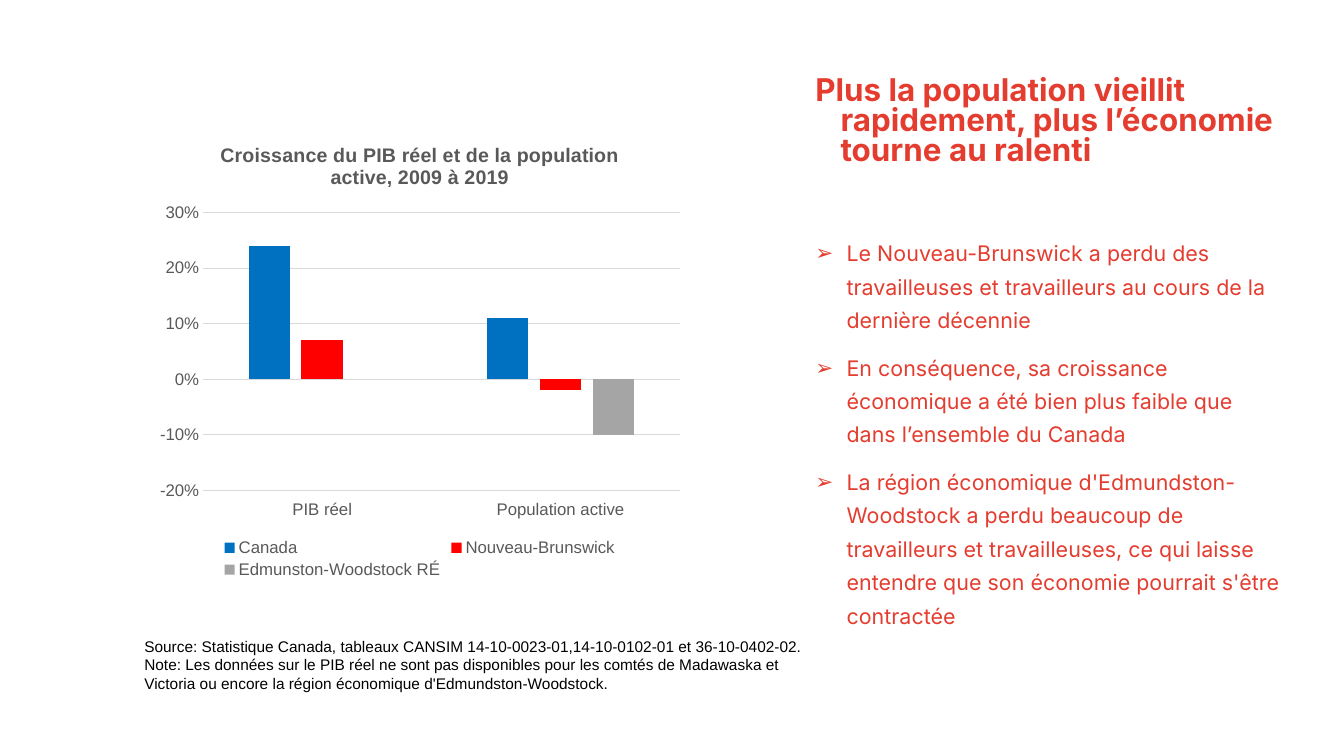
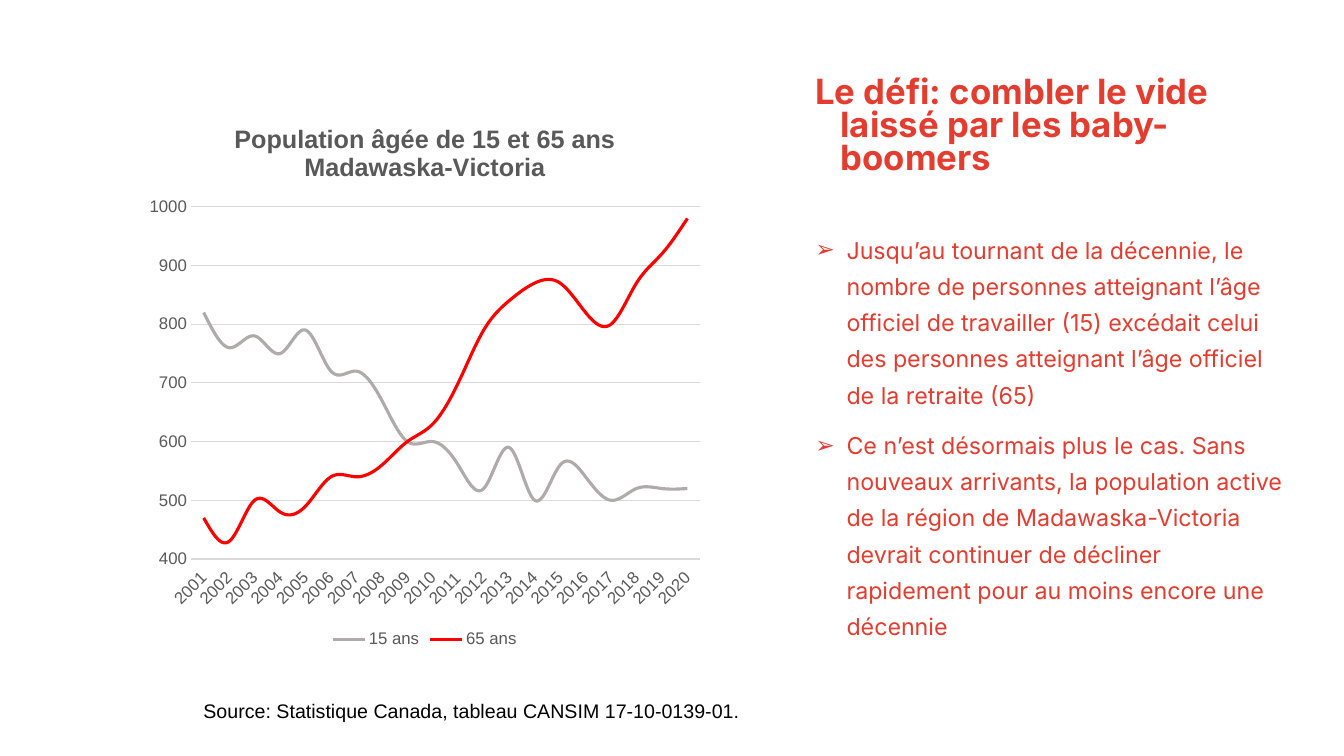
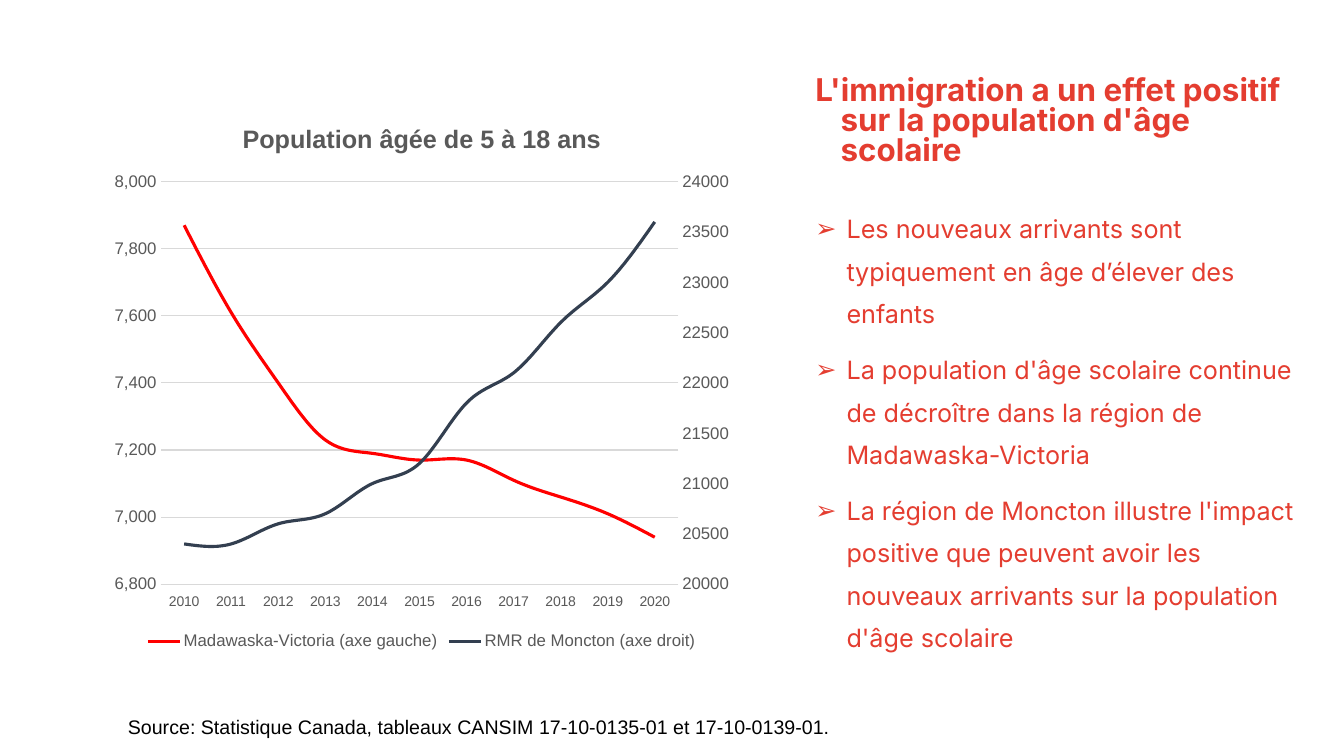
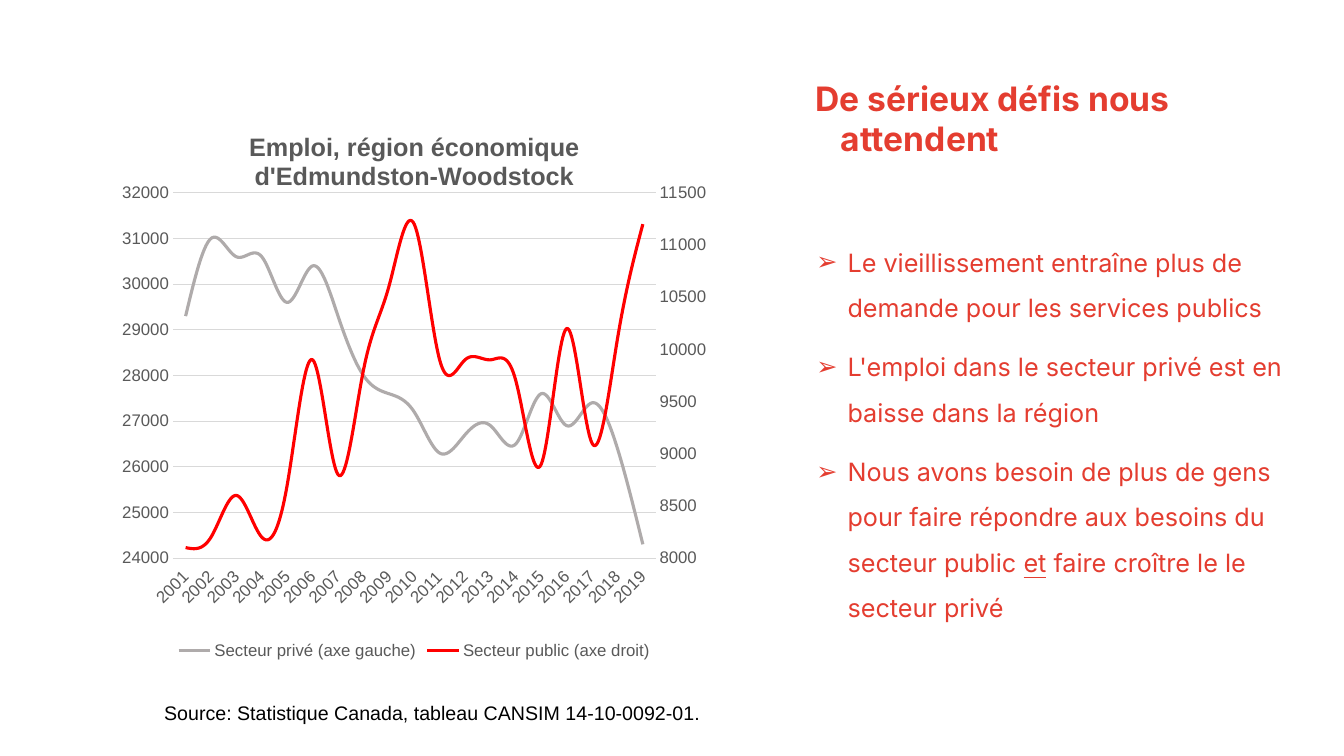
from copy import deepcopy
from dataclasses import dataclass
from typing import NamedTuple, Optional

from lxml import etree
from pptx import Presentation
from pptx.chart.axis import CategoryAxis, ValueAxis
from pptx.chart.chart import Chart
from pptx.chart.data import CategoryChartData
from pptx.dml.color import RGBColor
from pptx.enum.chart import (XL_CHART_TYPE, XL_LEGEND_POSITION, XL_TICK_LABEL_POSITION,
                             XL_TICK_MARK)
from pptx.enum.text import MSO_ANCHOR, MSO_AUTO_SIZE
from pptx.oxml.ns import qn
from pptx.slide import Slide
from pptx.text.text import Font, TextFrame, _Paragraph
from pptx.util import Inches, Pt

COLUMNS = XL_CHART_TYPE.COLUMN_CLUSTERED
LINES = XL_CHART_TYPE.LINE
LEGEND_BOTTOM = XL_LEGEND_POSITION.BOTTOM
LABELS_LOW = XL_TICK_LABEL_POSITION.LOW
TICK_NONE = XL_TICK_MARK.NONE
ANCHOR_TOP = MSO_ANCHOR.TOP
GROW = MSO_AUTO_SIZE.SHAPE_TO_FIT_TEXT

# Shared style
CORAL = RGBColor(0xE4, 0x3D, 0x30)
BLACK = RGBColor(0x00, 0x00, 0x00)
AXIS_GRAY = RGBColor(0x59, 0x59, 0x59)
GRID_GRAY = RGBColor(0xD9, 0xD9, 0xD9)
BLUE = RGBColor(0x00, 0x70, 0xC0)
RED = RGBColor(0xFF, 0x00, 0x00)
BAR_GRAY = RGBColor(0xA5, 0xA5, 0xA5)
LINE_GRAY = RGBColor(0xAF, 0xAB, 0xAB)
NAVY = RGBColor(0x33, 0x3F, 0x50)
TEXT_FONT = "Inter"
CHART_FONT = "Arial"

# Grid of 40 columns by 22.5 rows
CELL = Inches(1) / 3
GRID_COLUMNS, GRID_ROWS = 40, 22.5


class Area(NamedTuple):
    """Left, top, width and height in grid cells."""
    left: float
    top: float
    width: float
    height: float

    def lengths(self) -> list[int]:
        return [round(cells * CELL) for cells in self]


class Span(NamedTuple):
    text: str
    underline: bool = False


class Scale(NamedTuple):
    low: float
    high: float
    step: float
    number_format: str = "General"


class Series(NamedTuple):
    name: str
    color: RGBColor
    values: tuple[Optional[float], ...]


@dataclass(frozen=True)
class Graph:
    area: Area
    title: str
    categories: tuple[str, ...]
    series: tuple[Series, ...]
    scale: Scale
    kind: XL_CHART_TYPE = LINES
    right_scale: Optional[Scale] = None
    title_size: float = 18
    category_size: float = 12
    slanted: bool = False
    label_step: int = 1
    plot_share: Optional[tuple[float, float, float, float]] = None


@dataclass(frozen=True)
class Page:
    title: str
    title_size: float
    bullets: tuple[tuple[Span, ...], ...]
    bullet_size: float
    bullet_spacing: float
    bullet_area: Area
    graph: Graph
    source: tuple[str, ...]
    source_area: Area
    source_size: float = 14
    title_spacing: float = 0.8


TITLE_AREA = Area(23.22, 2.16, 15.27, 3.9)


def years(first: int, last: int) -> tuple[str, ...]:
    return tuple(str(year) for year in range(first, last + 1))


# Text
def set_font(font: Font, name: str, size: float, color: RGBColor, bold: bool = False) -> None:
    font.name = name
    font.size = Pt(size)
    font.bold = bold
    font.color.rgb = color


def add_frame(slide: Slide, area: Area) -> TextFrame:
    frame = slide.shapes.add_textbox(*area.lengths()).text_frame
    frame.word_wrap = True
    frame.vertical_anchor = ANCHOR_TOP
    return frame


def next_paragraph(frame: TextFrame, index: int) -> _Paragraph:
    return frame.add_paragraph() if index else frame.paragraphs[0]


def set_indent(para: _Paragraph, margin: float, hanging: float) -> None:
    properties = para._p.get_or_add_pPr()
    properties.set("marL", str(Inches(margin)))
    properties.set("indent", str(-Inches(hanging)))


def add_bullet(para: _Paragraph) -> None:
    properties = para._p.get_or_add_pPr()
    color = etree.SubElement(properties, qn("a:buClr"))
    etree.SubElement(color, qn("a:srgbClr"), val=str(CORAL))
    etree.SubElement(properties, qn("a:buFont"), typeface=CHART_FONT)
    etree.SubElement(properties, qn("a:buChar"), char="➢")


def draw_title(slide: Slide, page: Page) -> None:
    para = add_frame(slide, TITLE_AREA).paragraphs[0]
    set_indent(para, 0.5, 0.25)
    para.line_spacing = page.title_spacing
    run = para.add_run()
    run.text = page.title
    set_font(run.font, TEXT_FONT, page.title_size, CORAL, bold=True)


def draw_bullets(slide: Slide, page: Page) -> None:
    frame = add_frame(slide, page.bullet_area)
    for index, spans in enumerate(page.bullets):
        para = next_paragraph(frame, index)
        set_indent(para, 0.56, 0.31)
        add_bullet(para)
        para.line_spacing = page.bullet_spacing
        if index:
            para.space_before = Pt(10)
        for span in spans:
            run = para.add_run()
            run.text = span.text
            set_font(run.font, TEXT_FONT, page.bullet_size, CORAL)
            if span.underline:
                run.font.underline = True


def draw_source(slide: Slide, page: Page) -> None:
    frame = add_frame(slide, page.source_area)
    frame.auto_size = GROW
    for index, text in enumerate(page.source):
        run = next_paragraph(frame, index).add_run()
        run.text = text
        set_font(run.font, CHART_FONT, page.source_size, BLACK)


# Charts
def style_value_axis(axis: ValueAxis, scale: Scale, gridlines: bool = True) -> None:
    axis.minimum_scale, axis.maximum_scale = scale.low, scale.high
    axis.major_unit = scale.step
    axis.major_tick_mark = axis.minor_tick_mark = TICK_NONE
    axis.has_major_gridlines = gridlines
    if gridlines:
        grid_line = axis.major_gridlines.format.line
        grid_line.color.rgb = GRID_GRAY
        grid_line.width = Pt(0.75)
    axis.format.line.fill.background()
    axis.tick_labels.number_format = scale.number_format
    axis.tick_labels.number_format_is_linked = False
    set_font(axis.tick_labels.font, CHART_FONT, 12, AXIS_GRAY)


def style_category_axis(axis: CategoryAxis, graph: Graph) -> None:
    axis.major_tick_mark = axis.minor_tick_mark = TICK_NONE
    axis.tick_label_position = LABELS_LOW
    axis.format.line.color.rgb = GRID_GRAY
    axis.format.line.width = Pt(0.75)
    set_font(axis.tick_labels.font, CHART_FONT, graph.category_size, AXIS_GRAY)
    element = axis._element
    if graph.slanted:
        element.find(qn("c:txPr")).find(qn("a:bodyPr")).set("rot", str(-45 * 60000))
    if graph.label_step > 1:
        skip = etree.Element(qn("c:tickLblSkip"), val=str(graph.label_step))
        element.find(qn("c:noMultiLvlLbl")).addprevious(skip)


def style_series(chart: Chart, graph: Graph) -> None:
    plot = chart.plots[0]
    plot.vary_by_categories = False
    if graph.kind == COLUMNS:
        plot.gap_width, plot.overlap = 219, -27
    for item, series in zip(plot.series, graph.series):
        if graph.kind == COLUMNS:
            item.invert_if_negative = False
            item.format.fill.solid()
            item.format.fill.fore_color.rgb = series.color
        else:
            item.smooth = True
            item.format.line.color.rgb = series.color
            item.format.line.width = Pt(2.25)


def add_right_axis(chart: Chart, scale: Scale) -> None:
    """Move the second series to its own plot, scaled on the right."""
    left_plot = chart.plots[0]._element
    right_plot = deepcopy(left_plot)
    left_plot.remove(left_plot.findall(qn("c:ser"))[1])
    right_plot.remove(right_plot.findall(qn("c:ser"))[0])
    left_plot.addnext(right_plot)

    left_value = chart.value_axis._element
    category = deepcopy(chart.category_axis._element)
    value = deepcopy(left_value)
    left_value.addnext(value)
    value.addnext(category)
    for element, own, crossing in ((category, "5001", "5002"), (value, "5002", "5001")):
        element.find(qn("c:axId")).set("val", own)
        element.find(qn("c:crossAx")).set("val", crossing)
    for reference, own in zip(right_plot.findall(qn("c:axId")), ("5001", "5002")):
        reference.set("val", own)
    value.find(qn("c:axPos")).set("val", "r")
    value.find(qn("c:crosses")).set("val", "max")
    CategoryAxis(category).visible = False
    style_value_axis(ValueAxis(value), scale, gridlines=False)


def place_plot(chart: Chart, shares: tuple[float, float, float, float]) -> None:
    plot_area = chart._chartSpace.chart.plotArea
    for old_layout in plot_area.findall(qn("c:layout")):
        plot_area.remove(old_layout)
    layout = etree.Element(qn("c:layout"))
    manual = etree.SubElement(layout, qn("c:manualLayout"))
    settings = [("layoutTarget", "inner"), ("xMode", "edge"), ("yMode", "edge")]
    settings += zip("xywh", map(str, shares))
    for tag, setting in settings:
        etree.SubElement(manual, qn(f"c:{tag}"), val=setting)
    plot_area.insert(0, layout)


def draw_graph(slide: Slide, graph: Graph) -> None:
    data = CategoryChartData()
    data.categories = graph.categories
    for series in graph.series:
        data.add_series(series.name, series.values)
    chart = slide.shapes.add_chart(graph.kind, *graph.area.lengths(), data).chart
    set_font(chart.font, CHART_FONT, 12, AXIS_GRAY)

    chart.has_title = True
    chart.chart_title.include_in_layout = False
    title_frame = chart.chart_title.text_frame
    for index, text in enumerate(graph.title.split("\n")):
        run = next_paragraph(title_frame, index).add_run()
        run.text = text
        set_font(run.font, CHART_FONT, graph.title_size, AXIS_GRAY, bold=True)

    chart.has_legend = True
    chart.legend.position = LEGEND_BOTTOM
    chart.legend.include_in_layout = False
    set_font(chart.legend.font, CHART_FONT, 12, AXIS_GRAY)

    style_series(chart, graph)
    style_category_axis(chart.category_axis, graph)
    style_value_axis(chart.value_axis, graph.scale)
    if graph.right_scale:
        add_right_axis(chart, graph.right_scale)
    if graph.plot_share:
        place_plot(chart, graph.plot_share)


# Content
PAGES = (
    Page(
        title="Plus la population vieillit rapidement, plus l’économie tourne au ralenti",
        title_size=22.4,
        bullets=(
            (Span("Le Nouveau-Brunswick a perdu des travailleuses et travailleurs au cours "
                  "de la dernière décennie"),),
            (Span("En conséquence, sa croissance économique a été bien plus faible que dans "
                  "l’ensemble du Canada"),),
            (Span("La région économique d'Edmundston-Woodstock a perdu beaucoup de "
                  "travailleurs et travailleuses, ce qui laisse entendre que son économie "
                  "pourrait s'être contractée"),),
        ),
        bullet_size=15.3,
        bullet_spacing=1.3,
        bullet_area=Area(23.22, 6.78, 15.27, 13),
        graph=Graph(
            area=Area(4.44, 3.69, 16.11, 13.65),
            title="Croissance du PIB réel et de la population active, 2009 à 2019",
            title_size=14,
            kind=COLUMNS,
            categories=("PIB réel", "Population active"),
            series=(
                Series("Canada", BLUE, (0.24, 0.11)),
                Series("Nouveau-Brunswick", RED, (0.07, -0.02)),
                Series("Edmunston-Woodstock RÉ", BAR_GRAY, (None, -0.1)),
            ),
            scale=Scale(-0.2, 0.3, 0.1, "0%"),
        ),
        source=(
            "Source: Statistique Canada, tableaux CANSIM 14-10-0023-01,14-10-0102-01 et "
            "36-10-0402-02.",
            "Note: Les données sur le PIB réel ne sont pas disponibles pour les comtés de "
            "Madawaska et Victoria ou encore la région économique d'Edmundston-Woodstock.",
        ),
        source_area=Area(4, 18.81, 20.79, 1.98),
        source_size=11,
    ),
    Page(
        title="Le défi: combler le vide laissé par les baby-boomers",
        title_size=24.8,
        bullets=(
            (Span("Jusqu’au tournant de la décennie, le nombre de personnes atteignant l’âge "
                  "officiel de travailler (15) excédait celui des personnes atteignant l’âge "
                  "officiel de la retraite (65)"),),
            (Span("Ce n’est désormais plus le cas. Sans nouveaux arrivants, la population "
                  "active de la région de Madawaska-Victoria devrait continuer de décliner "
                  "rapidement pour au moins encore une décennie"),),
        ),
        bullet_size=16.6,
        bullet_spacing=1.3,
        bullet_area=Area(23.22, 6.63, 15.27, 13.71),
        graph=Graph(
            area=Area(4.11, 3.09, 17.07, 16.32),
            title="Population âgée de 15 et 65 ans\nMadawaska-Victoria",
            categories=years(2001, 2020),
            series=(
                Series("15 ans", LINE_GRAY,
                       (820, 760, 780, 750, 790, 720, 720, 670, 600, 600,
                        560, 520, 590, 500, 560, 540, 500, 520, 520, 520)),
                Series("65 ans", RED,
                       (470, 430, 500, 480, 490, 540, 540, 560, 600, 630,
                        700, 790, 840, 870, 870, 820, 800, 870, 920, 980)),
            ),
            scale=Scale(400, 1000, 100),
            slanted=True,
        ),
        source=("Source: Statistique Canada, tableau CANSIM 17-10-0139-01.",),
        source_area=Area(5.76, 20.64, 28.08, 1.02),
    ),
    Page(
        title="L'immigration a un effet positif sur la population d'âge scolaire",
        title_size=22.4,
        bullets=(
            (Span("Les nouveaux arrivants sont typiquement en âge d’élever des enfants"),),
            (Span("La population d'âge scolaire continue de décroître dans la région de "
                  "Madawaska-Victoria"),),
            (Span("La région de Moncton illustre l'impact positive que peuvent avoir les "
                  "nouveaux arrivants sur la population d'âge scolaire"),),
        ),
        bullet_size=18,
        bullet_spacing=1.4,
        bullet_area=Area(23.22, 5.85, 15.81, 14.34),
        graph=Graph(
            area=Area(3.03, 3.03, 19.05, 16.44),
            title="Population âgée de 5 à 18 ans",
            categories=years(2010, 2020),
            series=(
                Series("Madawaska-Victoria (axe gauche)", RED,
                       (7870, 7610, 7400, 7230, 7190, 7170, 7170, 7110, 7060, 7010, 6940)),
                Series("RMR de Moncton (axe droit)", NAVY,
                       (20400, 20400, 20600, 20700, 21000, 21200,
                        21800, 22100, 22600, 23000, 23600)),
            ),
            scale=Scale(6800, 8000, 200, "#,##0"),
            right_scale=Scale(20000, 24000, 500),
            category_size=10,
        ),
        source=("Source: Statistique Canada, tableaux CANSIM 17-10-0135-01 et "
                "17-10-0139-01.",),
        source_area=Area(3.51, 21.12, 28.08, 1.02),
    ),
    Page(
        title="De sérieux défis nous attendent",
        title_size=24,
        title_spacing=1.0,
        bullets=(
            (Span("Le vieillissement entraîne plus de demande pour les services publics"),),
            (Span("L'emploi dans le secteur privé est en baisse dans la région"),),
            (Span("Nous avons besoin de plus de gens pour faire répondre aux besoins du "
                  "secteur public "),
             Span("et", underline=True),
             Span(" faire croître le le secteur privé")),
        ),
        bullet_size=18,
        bullet_spacing=1.5,
        bullet_area=Area(23.25, 6.75, 15.27, 13),
        graph=Graph(
            area=Area(3.12, 3.27, 18.42, 16.47),
            title="Emploi, région économique d'Edmundston-Woodstock",
            categories=years(2001, 2019),
            series=(
                Series("Secteur privé (axe gauche)", LINE_GRAY,
                       (29300, 31000, 30600, 30600, 29600, 30400, 29300, 28000, 27600, 27200,
                        26300, 26700, 26900, 26500, 27600, 26900, 27400, 26400, 24300)),
                Series("Secteur public (axe droit)", RED,
                       (8100, 8200, 8600, 8200, 8700, 9900, 8800, 9800, 10600, 11200,
                        9900, 9900, 9900, 9700, 8900, 10200, 9100, 10100, 11200)),
            ),
            scale=Scale(24000, 32000, 1000),
            right_scale=Scale(8000, 11500, 500),
            slanted=True,
            label_step=2,
            plot_share=(0.11, 0.15, 0.78, 0.66),
        ),
        source=("Source: Statistique Canada, tableau CANSIM 14-10-0092-01.",),
        source_area=Area(4.59, 20.7, 26.91, 1.02),
    ),
)


def main() -> None:
    deck = Presentation()
    deck.slide_width = round(GRID_COLUMNS * CELL)
    deck.slide_height = round(GRID_ROWS * CELL)
    blank = deck.slide_layouts[6]
    for page in PAGES:
        slide = deck.slides.add_slide(blank)
        draw_title(slide, page)
        draw_bullets(slide, page)
        draw_graph(slide, page.graph)
        draw_source(slide, page)
    deck.save("out.pptx")


if __name__ == "__main__":
    main()
